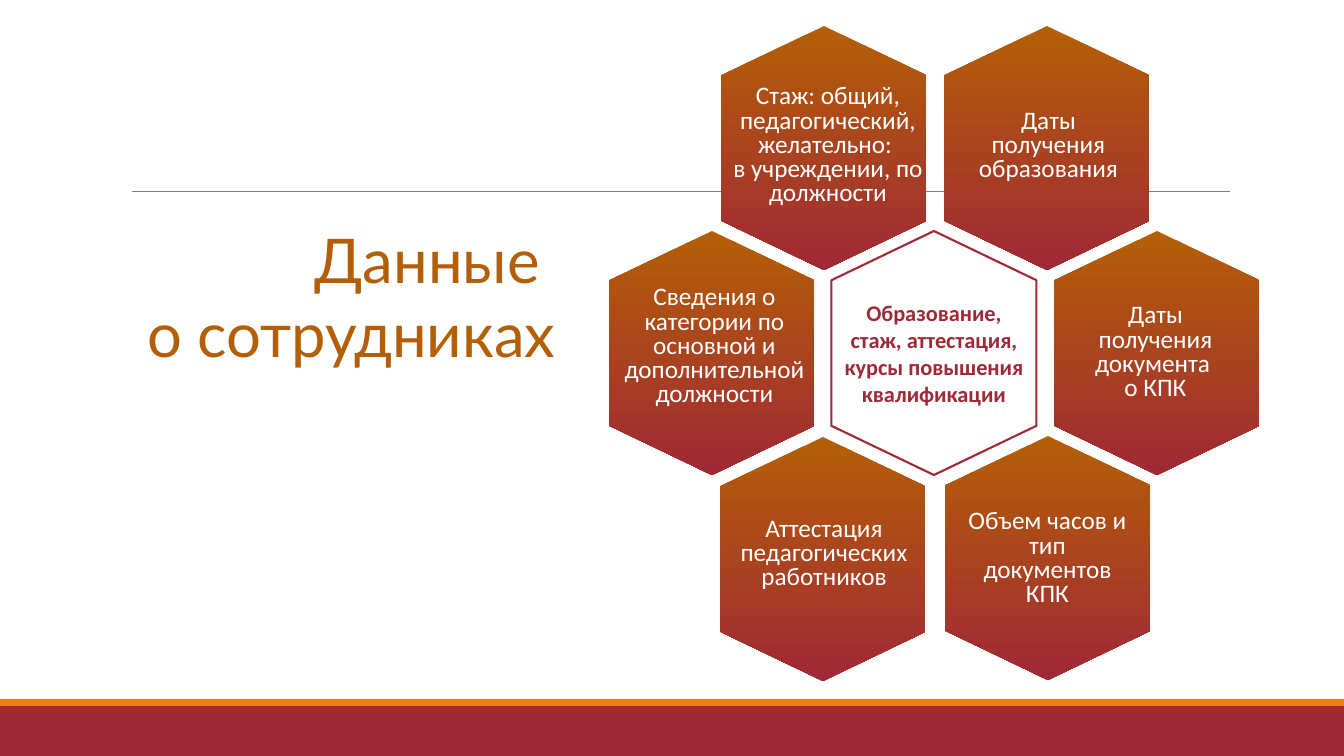
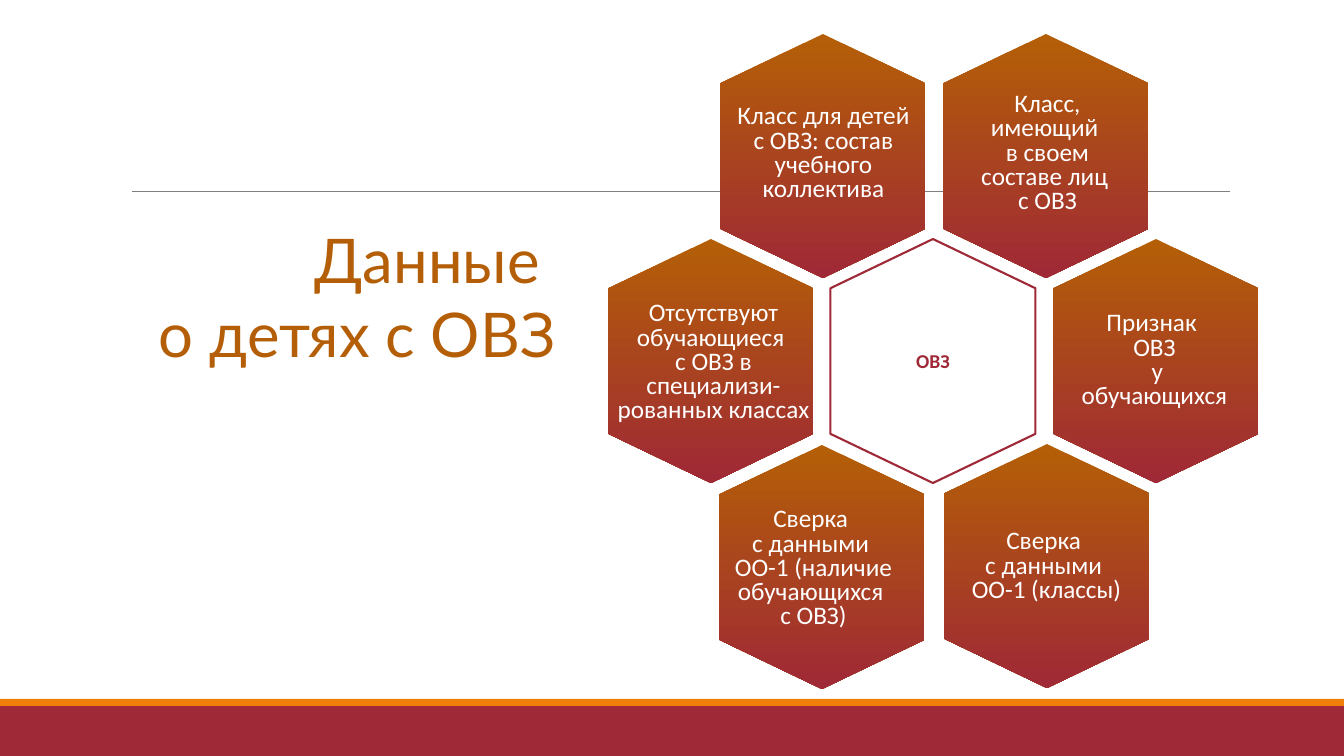
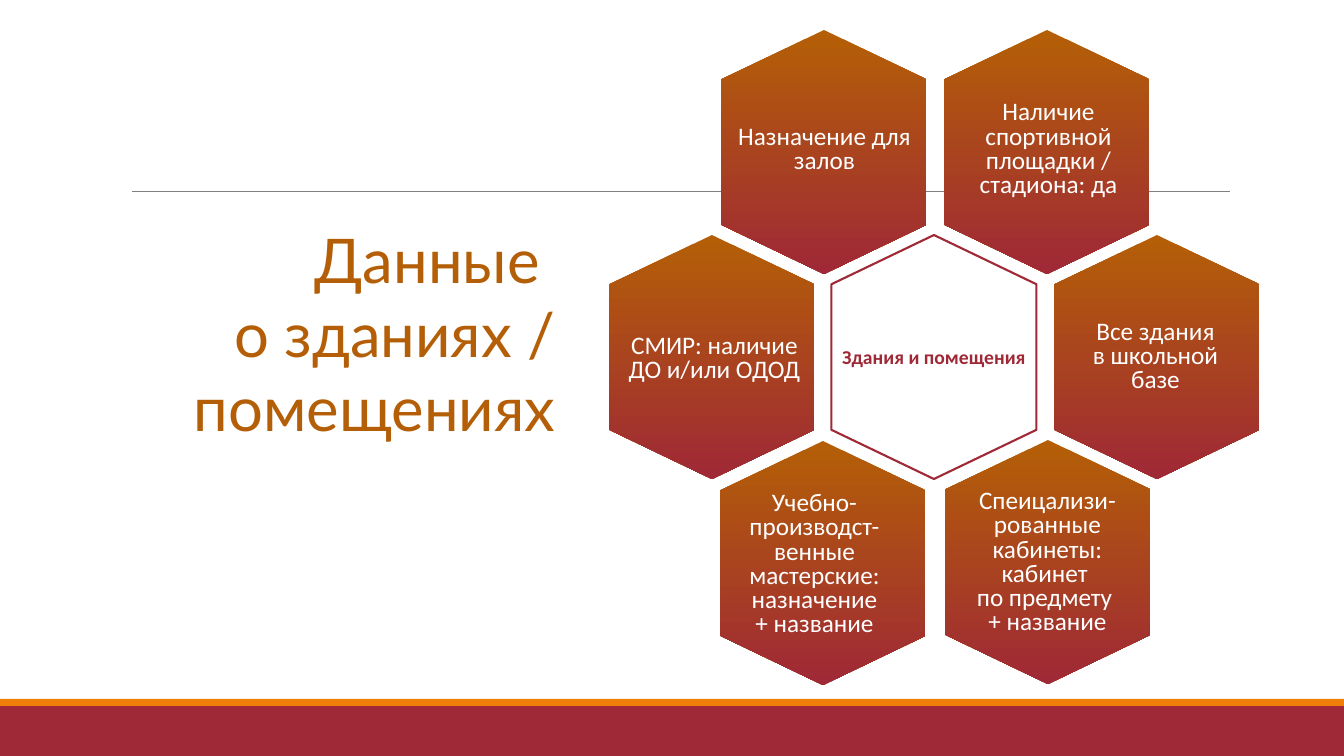
from lxml.etree import SubElement
from pptx import Presentation
from pptx.dml.color import RGBColor
from pptx.enum.shapes import MSO_CONNECTOR, MSO_SHAPE
from pptx.enum.text import MSO_ANCHOR, MSO_AUTO_SIZE, PP_ALIGN
from pptx.oxml.ns import qn
from pptx.util import Pt

WIDE, HIGH = 1344, 756
SCALE = 12192000 / WIDE
AMBER, WINE, ORANGE, GREY, WHITE = "B45F07", "9F2936", "F07F09", "808080", "FFFFFF"

BANDS = [(706, 50, WINE), (699, 7, ORANGE)]  # top, height, colour
RULE = (132, 191, 1230, 191)
TITLE = (92, 217, 474, 159)
HEX = (244, 205)  # before the quarter turn
BOX = 157

# hexagon centre, then text left edge and text centre height,
# all measured from the middle of the flower
SPOTS = {
    "left": (-222, 0, -328, 2),
    "low left": (-111, 206, -213, 208),
    "low right": (114, 205, 20, 206),
    "right": (223, 0, 128, 0),
    "top right": (113, -205, 21, -207),
    "top left": (-110, -205, -213, -207),
}

# each petal: text, text width and, where needed, a vertical nudge
SLIDES = [
    {
        "title": "Данные \nо сотрудниках",
        "mid": (934, 353),
        "core": ("Образование, стаж, аттестация, курсы повышения квалификации", 16),
        "petals": {
            "left": ("Сведения о категории по основной и дополнительной должности", 217, -8),
            "low left": ("Аттестация педагогических работников", 206, -7),
            "low right": ("Объем часов и тип документов КПК", 187),
            "right": ("Даты получения документа \nо КПК", 187),
            "top right": ("Даты получения образования", 187),
            "top left": ("Стаж: общий, педагогический, желательно: \n"
                         "в учреждении, по должности", 214),
        },
    },
    {
        "title": "Данные \nо детях с ОВЗ",
        "mid": (933, 361),
        "core": ("ОВЗ", 14),
        "petals": {
            "left": ("Отсутствуют обучающиеся \nс ОВЗ в специализи-рованных классах", 217),
            "low left": ("Сверка \nс данными \nОО-1 (наличие обучающихся \nс ОВЗ)", 187),
            "low right": ("Сверка \nс данными \nОО-1 (классы)", 187),
            "right": ("Признак \nОВЗ\n у обучающихся", 187),
            "top right": ("Класс, имеющий \nв своем составе лиц \nс ОВЗ", 187),
            "top left": ("Класс для детей с ОВЗ: состав учебного коллектива", 207),
        },
    },
    {
        "title": "Данные \nо зданиях / помещениях",
        "mid": (934, 357),
        "core": ("Здания и помещения", 14),
        "petals": {
            "left": ("СМИР: наличие ДО и/или ОДОД", 217),
            "low left": ("Учебно-производст-венные мастерские: назначение\n+ название", 187),
            "low right": ("Спеицализи-рованные кабинеты: кабинет \nпо предмету \n+ название", 187),
            "right": ("Все здания\nв школьной базе", 187),
            "top right": ("Наличие спортивной площадки / стадиона: да", 187),
            "top left": ("Назначение для залов", 207),
        },
    },
]


def px(*nums):
    return [round(n * SCALE) for n in nums]


def tint(code):
    return RGBColor.from_string(code)


def write(frame, text, size=18, color=WHITE, font="Calibri", bold=False,
          align=PP_ALIGN.CENTER, anchor=MSO_ANCHOR.MIDDLE, line=None, after=6):
    frame.word_wrap = True
    frame.auto_size = MSO_AUTO_SIZE.NONE
    frame.vertical_anchor = anchor
    para = frame.paragraphs[0]
    para.text = text
    para.alignment, para.line_spacing, para.space_after = align, line, Pt(after)
    for run in para.runs:
        face = run.font
        face.name, face.size, face.bold = font, Pt(size), bold
        face.color.rgb = tint(color)


def label(slide, left, mid, width, text, **style):
    """Add a text box centred vertically on mid."""
    box = slide.shapes.add_textbox(*px(left, mid - BOX / 2, width, BOX))
    write(box.text_frame, text, **style)


def hexagon(slide, x, y, solid=True):
    """Add an upright hexagon centred on x, y: gradient or outline only."""
    wide, high = HEX
    cell = slide.shapes.add_shape(
        MSO_SHAPE.HEXAGON, *px(x - wide / 2, y - high / 2, wide, high))
    cell.rotation = 270
    cell.adjustments[0] = 0.24
    cell.shadow.inherit = False
    if solid:
        cell.fill.gradient()
        cell.fill.gradient_angle = 180
        for stop, code in zip(cell.fill.gradient_stops, (AMBER, WINE)):
            stop.color.rgb = tint(code)
        cell.line.fill.background()
    else:
        cell.fill.background()
        cell.line.color.rgb = tint(WINE)
        cell.line.width = Pt(1.5)


def dress(master, slide):
    """Draw the bands and the rule, then move them to the master."""
    parts = []
    for top, high, code in BANDS:
        band = slide.shapes.add_shape(MSO_SHAPE.RECTANGLE, *px(0, top, WIDE, high))
        band.shadow.inherit = False
        band.fill.solid()
        band.fill.fore_color.rgb = tint(code)
        band.line.fill.background()
        parts.append(band)
    rule = slide.shapes.add_connector(MSO_CONNECTOR.STRAIGHT, *px(*RULE))
    rule.line.color.rgb = tint(GREY)
    rule.line.width = Pt(0.5)
    SubElement(rule.element.spPr, qn("a:effectLst"))
    for num, part in enumerate(parts + [rule], 20):
        part.element.xpath(".//p:cNvPr")[0].set("id", str(num))
        master.shapes.element.append(part.element)


def flower(slide, mid, core, petals):
    x, y = mid
    for spot, (text, width, *nudge) in petals.items():
        dx, dy, left, level = SPOTS[spot]
        hexagon(slide, x + dx, y + dy)
        label(slide, x + left, y + level + sum(nudge), width, text, line=0.8)
    hexagon(slide, x, y, solid=False)
    text, size = core
    label(slide, x - HEX[1] / 2, y, HEX[1], text, size=size, color=WINE, bold=True)


def main():
    deck = Presentation()
    deck.slide_width, deck.slide_height = px(WIDE, HIGH)
    layout = deck.slide_layouts[5]
    head = layout.placeholders[0]
    head.left, head.top, head.width, head.height = px(*TITLE)
    for num, data in enumerate(SLIDES):
        slide = deck.slides.add_slide(layout)
        if num == 0:
            dress(deck.slide_master, slide)
        flower(slide, data["mid"], data["core"], data["petals"])
        write(slide.shapes.title.text_frame, data["title"], size=44, color=AMBER,
              font="Lato", align=PP_ALIGN.RIGHT, anchor=MSO_ANCHOR.TOP, after=0)
    deck.save("out.pptx")


if __name__ == "__main__":
    main()
